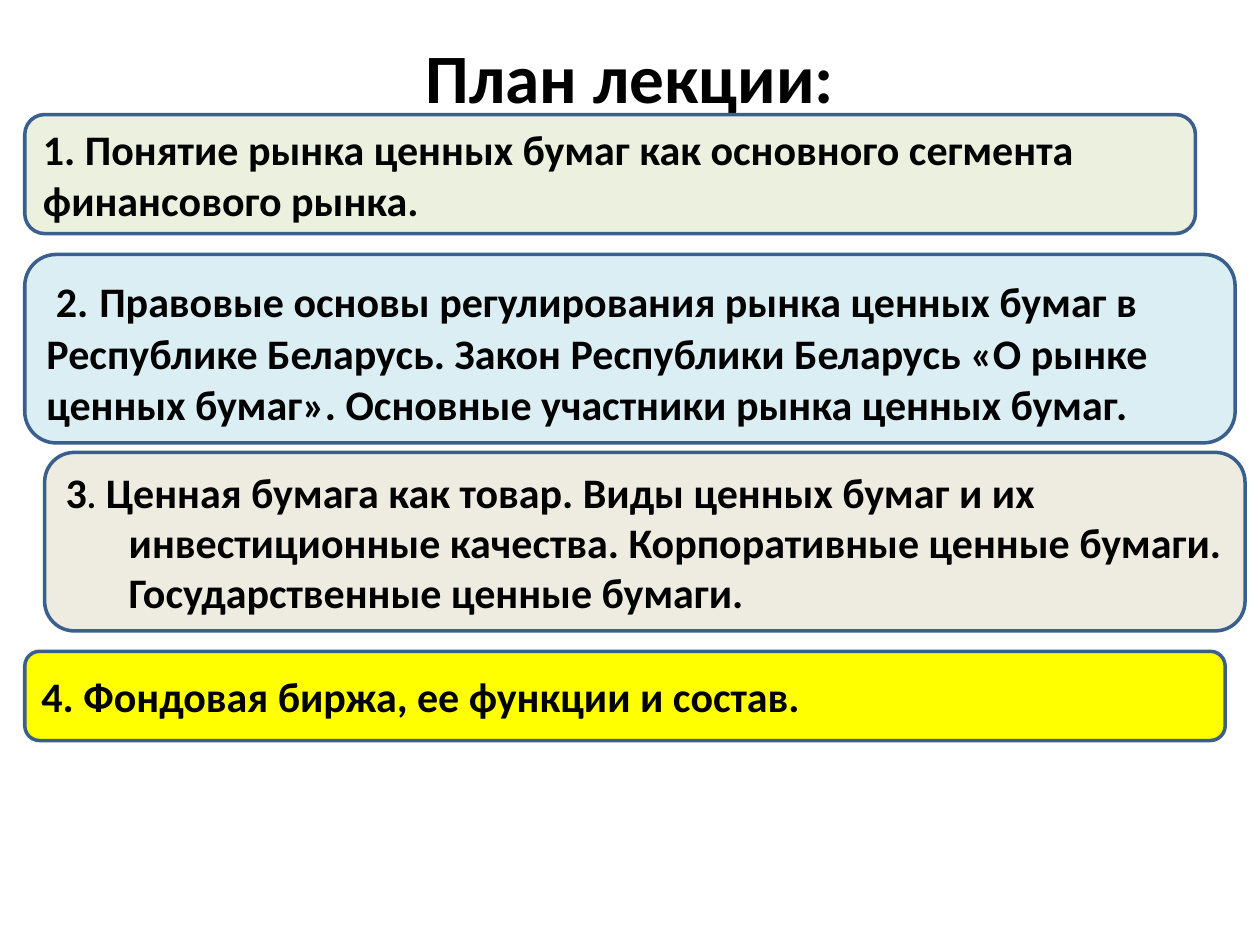
import pptx
import pptx.util
from pptx.dml.color import RGBColor
from pptx.enum.shapes import MSO_SHAPE
from pptx.enum.text import MSO_ANCHOR, MSO_AUTO_SIZE, PP_ALIGN
from pptx.util import Cm

BLACK = RGBColor(0x00, 0x00, 0x00)
OUTLINE_BLUE = RGBColor(0x3A, 0x5F, 0x8C)
PALE_GREEN = RGBColor(0xEB, 0xF1, 0xDE)
PALE_BLUE = RGBColor(0xDB, 0xEE, 0xF4)
PALE_BEIGE = RGBColor(0xEE, 0xEC, 0xE1)
YELLOW = RGBColor(0xFF, 0xFF, 0x00)


class LecturePlan:
    font_name = "Calibri"
    title_size = 39.6
    topic_size = 24

    def __init__(self, slide):
        self.slide = slide

    def style_run(self, run, size):
        run.font.name = self.font_name
        run.font.size = pptx.util.Pt(size)
        run.font.bold = True
        run.font.color.rgb = BLACK

    def title(self, text, left, top, width, height):
        shape = self.slide.shapes.title
        shape.left, shape.top = Cm(left), Cm(top)
        shape.width, shape.height = Cm(width), Cm(height)
        text_frame = shape.text_frame
        text_frame.text = text
        text_frame.word_wrap = True
        text_frame.auto_size = MSO_AUTO_SIZE.NONE
        text_frame.vertical_anchor = MSO_ANCHOR.MIDDLE
        paragraph = text_frame.paragraphs[0]
        paragraph.alignment = PP_ALIGN.CENTER
        self.style_run(paragraph.runs[0], self.title_size)

    def topic(self, parts, left, top, width, height, fill, margin=0, indent=0):
        shape = self.slide.shapes.add_shape(
            MSO_SHAPE.ROUNDED_RECTANGLE, Cm(left), Cm(top), Cm(width), Cm(height))
        shape.shadow.inherit = False
        shape.fill.solid()
        shape.fill.fore_color.rgb = fill
        shape.line.color.rgb = OUTLINE_BLUE
        shape.line.width = pptx.util.Pt(2)
        text_frame = shape.text_frame
        text_frame.word_wrap = True
        text_frame.vertical_anchor = MSO_ANCHOR.MIDDLE
        paragraph = text_frame.paragraphs[0]
        paragraph.alignment = PP_ALIGN.LEFT
        if margin or indent:
            properties = paragraph._p.get_or_add_pPr()
            properties.set("marL", str(Cm(margin)))
            properties.set("indent", str(Cm(indent)))
        for text, size in parts:
            run = paragraph.add_run()
            run.text = text
            self.style_run(run, size)


def main():
    presentation = pptx.Presentation()
    presentation.slide_width = Cm(25.4)
    presentation.slide_height = Cm(19.05)
    slide = presentation.slides.add_slide(presentation.slide_layouts[5])
    plan = LecturePlan(slide)
    size = plan.topic_size

    plan.title("План лекции:", 1.27, 0.76, 22.86, 1.55)
    plan.topic(
        [("1. Понятие рынка ценных бумаг как основного сегмента финансового рынка.", size)],
        0.5, 2.31, 23.6, 2.4, PALE_GREEN)
    plan.topic(
        [("2.", size), (" ", 28),
         ("Правовые основы регулирования рынка ценных бумаг в Республике Беларусь. "
          "Закон Республики Беларусь «О рынке ценных бумаг». "
          "Основные участники рынка ценных бумаг.", size)],
        0.5, 5.13, 24.4, 3.8, PALE_BLUE, indent=0.19)
    plan.topic(
        [("3", size), (".", 20),
         (" Ценная бумага как товар. Виды ценных бумаг и их инвестиционные качества. "
          "Корпоративные ценные бумаги. Государственные ценные бумаги.", size)],
        0.9, 9.12, 24.2, 3.6, PALE_BEIGE, margin=1.27, indent=-1.27)
    plan.topic(
        [("4. Фондовая биржа, ее функции и состав.", size)],
        0.5, 13.13, 24.2, 1.8, YELLOW)

    presentation.save("out.pptx")


if __name__ == "__main__":
    main()
